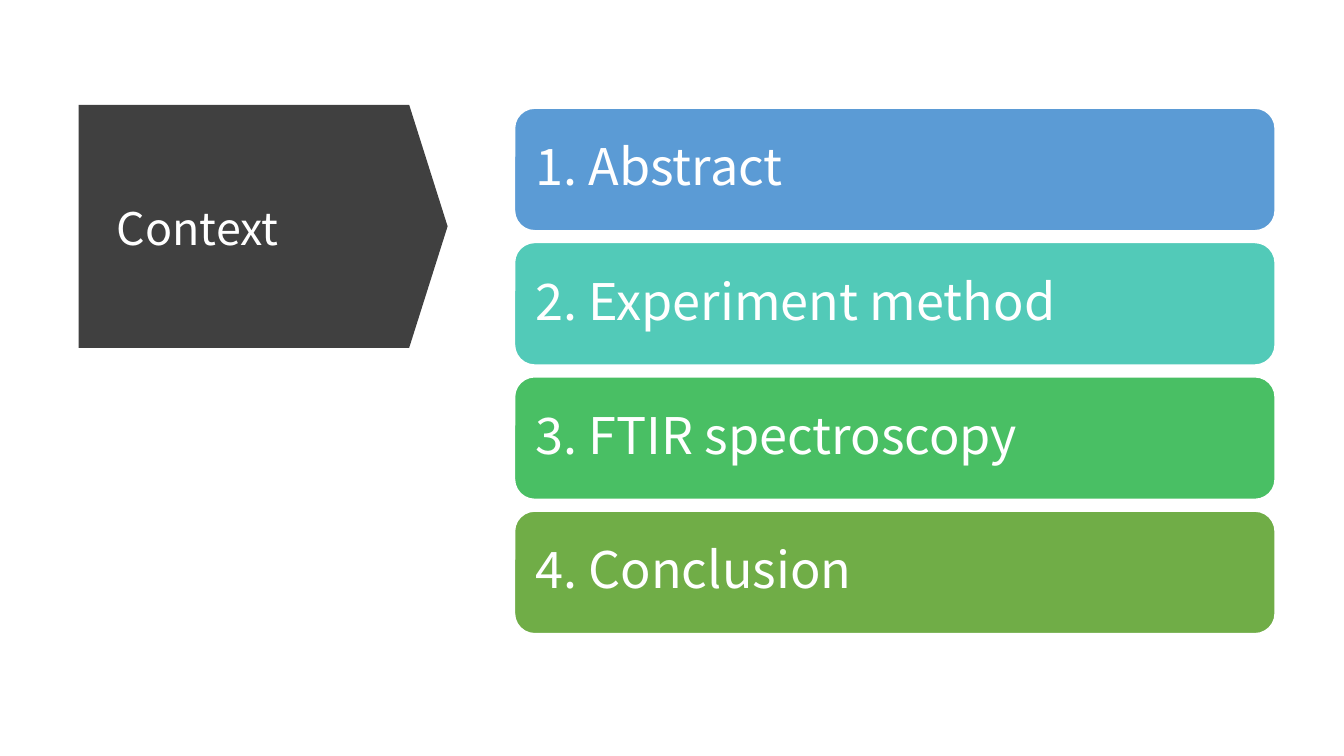
from dataclasses import dataclass

from pptx import Presentation
from pptx.dml.color import RGBColor
from pptx.enum.shapes import MSO_SHAPE
from pptx.enum.text import MSO_ANCHOR, PP_ALIGN
from pptx.util import Inches, Pt


@dataclass(frozen=True)
class Theme:
    font: str = "Noto Sans CJK KR"
    white: str = "FFFFFF"
    arrow: str = "404040"
    bars: tuple = ("5B9BD5", "52CAB8", "49BF64", "70AD47")
    title_size: int = 32
    item_size: int = 36
    outline: float = 1.5
    line_spacing: float = 0.9


@dataclass(frozen=True)
class Box:
    left: float
    top: float
    width: float
    height: float

    def lengths(self):
        return [Inches(n) for n in (self.left, self.top, self.width, self.height)]


THEME = Theme()
ITEMS = ("1. Abstract", "2. Experiment method", "3. FTIR spectroscopy", "4. Conclusion")


def add_filled_shape(page, kind, box, color):
    shape = page.shapes.add_shape(kind, *box.lengths())
    shape.shadow.inherit = False
    shape.fill.solid()
    shape.fill.fore_color.rgb = RGBColor.from_string(color)
    return shape


def write_text(shape, text, size, inset):
    frame = shape.text_frame
    frame.word_wrap = True
    frame.vertical_anchor = MSO_ANCHOR.MIDDLE
    frame.margin_left = frame.margin_right = Inches(inset)
    frame.margin_top = frame.margin_bottom = Inches(inset)
    frame.text = text
    para = frame.paragraphs[0]
    para.alignment = PP_ALIGN.LEFT
    para.line_spacing = THEME.line_spacing
    font = para.runs[0].font
    font.name = THEME.font
    font.size = Pt(size)
    font.color.rgb = RGBColor.from_string(THEME.white)


def add_title_arrow(page, box, title):
    upright = Box(
        box.left + (box.width - box.height) / 2,
        box.top + (box.height - box.width) / 2,
        box.height,
        box.width,
    )
    arrow = add_filled_shape(page, MSO_SHAPE.DOWN_ARROW, upright, THEME.arrow)
    arrow.rotation = 270
    arrow.adjustments[0] = 1
    arrow.adjustments[1] = 0.158
    arrow.line.fill.background()

    label_box = Box(box.left + 0.28, box.top + 0.28, 2.92, 1.95)
    label = page.shapes.add_textbox(*label_box.lengths())
    write_text(label, title, THEME.title_size, 0.1)


def add_contents(page, box, items):
    gap = 0.11
    height = (box.height - gap * (len(items) - 1)) / len(items)
    for index, (item, color) in enumerate(zip(items, THEME.bars)):
        bar_box = Box(box.left, box.top + index * (height + gap), box.width, height)
        bar = add_filled_shape(page, MSO_SHAPE.ROUNDED_RECTANGLE, bar_box, color)
        bar.line.color.rgb = RGBColor.from_string(THEME.white)
        bar.line.width = Pt(THEME.outline)
        write_text(bar, item, THEME.item_size, 0.15)


def main():
    deck = Presentation()
    deck.slide_width = Inches(13.33)
    deck.slide_height = Inches(7.5)
    page = deck.slides.add_slide(deck.slide_layouts[6])
    add_title_arrow(page, Box(0.78, 1.04, 3.66, 2.41), "Context")
    add_contents(page, Box(5.1, 1.07, 7.55, 5.22), ITEMS)
    deck.save("out.pptx")


if __name__ == "__main__":
    main()
